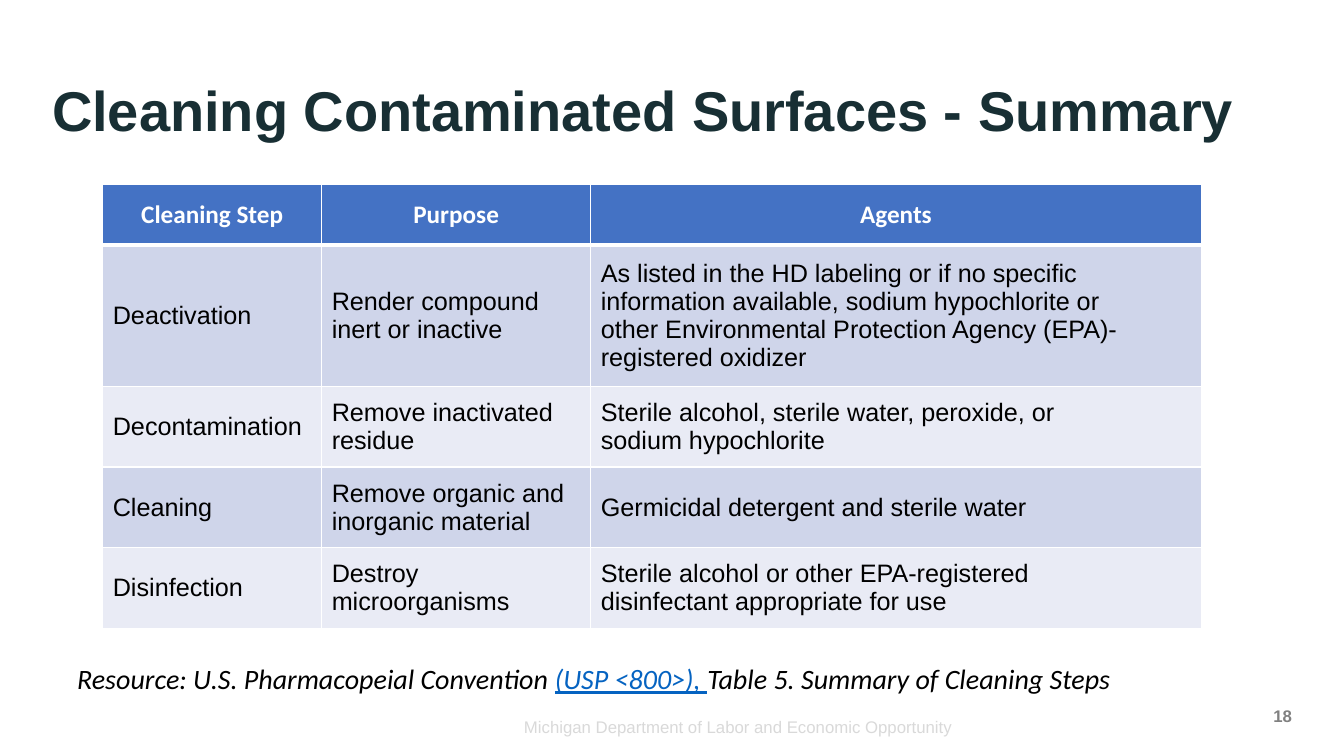
from lxml.etree import SubElement
from pptx import Presentation
from pptx.dml.color import RGBColor
from pptx.enum.text import MSO_ANCHOR, MSO_AUTO_SIZE, PP_ALIGN
from pptx.oxml.ns import qn
from pptx.util import Pt

# Content
TITLE = "Cleaning Contaminated Surfaces - Summary"
HEAD = ["Cleaning Step", "Purpose", "Agents"]
STEPS = [
    ("Deactivation",
     "Render compound\ninert or inactive",
     "As listed in the HD labeling or if no specific\n"
     "information available, sodium hypochlorite or\n"
     "other Environmental Protection Agency (EPA)-\n"
     "registered oxidizer"),
    ("Decontamination",
     "Remove inactivated\nresidue",
     "Sterile alcohol, sterile water, peroxide, or\nsodium hypochlorite"),
    ("Cleaning",
     "Remove organic and\ninorganic material",
     "Germicidal detergent and sterile water"),
    ("Disinfection",
     "Destroy microorganisms",
     "Sterile alcohol or other EPA-registered\ndisinfectant appropriate for use"),
]
SOURCE = ["Resource: U.S. Pharmacopeial Convention ", "(USP <800>), ",
          "Table 5. Summary of Cleaning Steps"]
FOOTER = "Michigan Department of Labor and Economic Opportunity"
NUMBER = "18"


class Theme:
    head_font, body_font = "Calibri", "Arial"
    title, note, cell, small = 40, 20, 18, 12
    navy, blue, link = "182F34", "4472C4", "0563C1"
    bands = ["CFD5EA", "E9EBF5"]
    black, white, gray, pale = "000000", "FFFFFF", "808080", "D9D9D9"


# Geometry in points
COLS = [156.4, 192.2, 436]
ROWS = [43.2, 100.8] + [57.6] * 3
TABLE = (73.4, 132, sum(COLS), sum(ROWS))


def write(frame, text, size=Theme.cell, font=Theme.body_font, color=Theme.black,
          bold=False, italic=False, under=False, align=PP_ALIGN.LEFT,
          anchor=MSO_ANCHOR.MIDDLE, more=False):
    """Set the frame's text, or add a run to its last paragraph if more."""
    frame.word_wrap = True
    frame.vertical_anchor = anchor
    for i, line in enumerate(text.split("\n")):
        para = frame.paragraphs[-1] if more or i == 0 else frame.add_paragraph()
        para.alignment = align
        run = para.add_run()
        run.text = line
        face = run.font
        face.name, face.size = font, Pt(size)
        face.bold, face.italic, face.underline = bold, italic, under
        face.color.rgb = RGBColor.from_string(color)


def box(slide, *place):
    return slide.shapes.add_textbox(*map(Pt, place)).text_frame


def paint(cell, fill, base=1):
    """Fill a cell and draw white borders; base is the bottom width."""
    props = cell._tc.get_or_add_tcPr()
    for side, width in zip("LRTB", (1, 1, 1, base)):
        line = SubElement(props, qn(f"a:ln{side}"), w=str(Pt(width)))
        solid = SubElement(line, qn("a:solidFill"))
        SubElement(solid, qn("a:srgbClr"), val=Theme.white)
    cell.fill.solid()
    cell.fill.fore_color.rgb = RGBColor.from_string(fill)


def add_grid(slide):
    shape = slide.shapes.add_table(len(ROWS), len(COLS), *map(Pt, TABLE))
    grid = shape.table
    for col, width in zip(grid.columns, COLS):
        col.width = Pt(width)
    for row, height in zip(grid.rows, ROWS):
        row.height = Pt(height)
    for c, text in enumerate(HEAD):
        cell = grid.cell(0, c)
        paint(cell, Theme.blue, base=3)
        cell.vertical_anchor = MSO_ANCHOR.MIDDLE
        write(cell.text_frame, text, font=Theme.head_font, color=Theme.white,
              bold=True, align=PP_ALIGN.CENTER)
    for r, step in enumerate(STEPS, 1):
        for c, text in enumerate(step):
            cell = grid.cell(r, c)
            paint(cell, Theme.bands[(r - 1) % 2])
            cell.vertical_anchor = MSO_ANCHOR.MIDDLE
            write(cell.text_frame, text)


def main():
    deck = Presentation()
    deck.slide_width, deck.slide_height = Pt(960), Pt(540)
    slide = deck.slides.add_slide(deck.slide_layouts[5])

    # Title
    title = slide.shapes.title
    title.left, title.top, title.width, title.height = map(Pt, (30, 29, 900, 104))
    frame = title.text_frame
    frame.auto_size = MSO_AUTO_SIZE.NONE
    write(frame, TITLE, size=Theme.title, color=Theme.navy, bold=True)
    frame.paragraphs[0].line_spacing = 0.9

    # Table of cleaning steps
    add_grid(slide)

    # Source line with the reference in link style
    note = box(slide, 48, 469, 766, 55)
    for i, part in enumerate(SOURCE):
        cited = i == 1
        write(note, part, size=Theme.note, font=Theme.head_font, italic=True,
              color=Theme.link if cited else Theme.black, under=cited,
              anchor=MSO_ANCHOR.TOP, more=True)

    # Slide number and footer
    write(box(slide, 714, 497, 216, 29), NUMBER, size=Theme.small,
          color=Theme.gray, bold=True, align=PP_ALIGN.RIGHT)
    write(box(slide, 307.5, 508.5, 380, 21.6), FOOTER, size=Theme.small,
          color=Theme.pale, align=PP_ALIGN.RIGHT, anchor=MSO_ANCHOR.TOP)

    deck.save("out.pptx")


if __name__ == "__main__":
    main()
